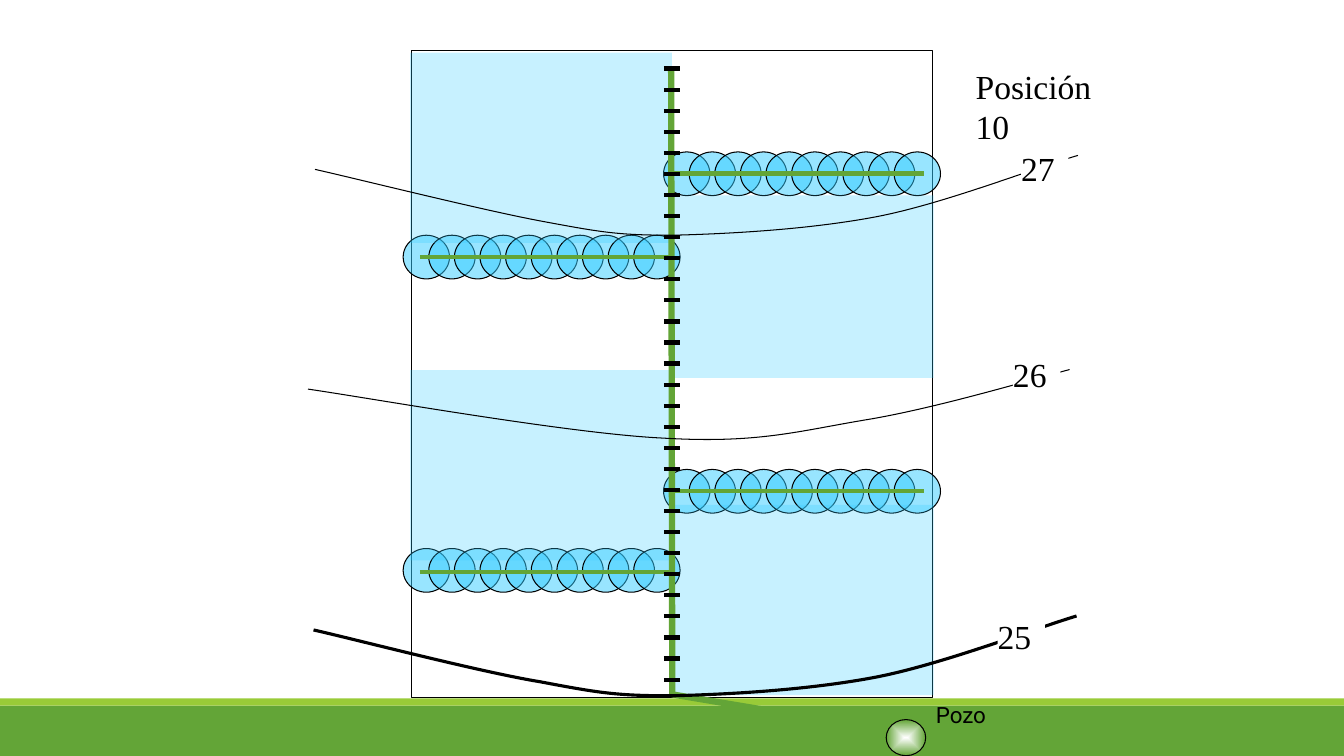
from lxml import etree
from pptx import Presentation
from pptx.dml.color import RGBColor
from pptx.enum.shapes import MSO_CONNECTOR, MSO_SHAPE
from pptx.enum.text import MSO_ANCHOR, PP_ALIGN
from pptx.oxml import parse_xml
from pptx.oxml.ns import nsdecls, qn
from pptx.util import Pt

RECT, OVAL = MSO_SHAPE.RECTANGLE, MSO_SHAPE.OVAL
STRAIGHT = MSO_CONNECTOR.STRAIGHT
TOP, LEFT = MSO_ANCHOR.TOP, PP_ALIGN.LEFT
GREEN, LIME, WATER = "63A537", "99CB38", "33CCFF"
BLACK, WHITE = "000000", "FFFFFF"

rgb = RGBColor.from_string
prs = Presentation()
prs.slide_width, prs.slide_height = Pt(960), Pt(540)
s = prs.slides.add_slide(prs.slide_layouts[6])


def add_shape(kind, x, y, w, h, fill=None, alpha=None, outlined=False):
    sp = s.shapes.add_shape(kind, Pt(x), Pt(y), Pt(w), Pt(h))
    sp.shadow.inherit = False
    if fill:
        sp.fill.solid()
        sp.fill.fore_color.rgb = rgb(fill)
    else:
        sp.fill.background()
    if alpha:
        clr = sp.element.spPr.find(".//" + qn("a:srgbClr"))
        etree.SubElement(clr, qn("a:alpha")).set("val", str(alpha * 1000))
    if outlined:
        sp.line.color.rgb = rgb(BLACK)
        sp.line.width = Pt(0.75)
    else:
        sp.line.fill.background()
    return sp


def add_line(x1, y1, x2, y2, color, width):
    line = s.shapes.add_connector(STRAIGHT, Pt(x1), Pt(y1), Pt(x2), Pt(y2))
    line.line.color.rgb = rgb(color)
    line.line.width = Pt(width)
    etree.SubElement(line.element.spPr, qn("a:effectLst"))


add_shape(RECT, 0, 504, 960, 36, GREEN)
add_shape(RECT, 0, 498.8, 960, 5.2, LIME)
add_shape(RECT, 294, 36, 372, 462.4, outlined=True)

sprinkler_rows = [
    (474, 335.3, 480, 350.8),
    (288, 391.8, 300, 408.8),
    (474, 108.5, 480, 124),
    (288, 168, 300, 183.6),
]
for x, y, pipe_x, pipe_y in sprinkler_rows:
    for i in range(10):
        add_shape(OVAL, x + i * 18.3, y, 33.1, 31.2, WATER, 50, True)
    add_line(pipe_x, pipe_y, pipe_x + 180, pipe_y, GREEN, 3)

for x, y, h in [(293, 264.4, 136), (293, 37.6, 136), (480, 139.6, 130.4), (480, 360.6, 136)]:
    add_shape(RECT, x, y, 187, h, WATER, 27)

add_line(480.2, 497.6, 479.4, 48.8, GREEN, 4.5)
add_line(480, 496, 636, 522, GREEN, 4.5)
for i in range(30):
    y = 49 + i * 15.05
    add_line(474.2, y, 485.6, y, BLACK, 3)

well = add_shape(OVAL, 633, 514, 28.2, 25.8, outlined=True)
no_fill = well.element.spPr.find(qn("a:noFill"))
well.element.spPr.replace(no_fill, parse_xml(
    f'<a:gradFill {nsdecls("a")} rotWithShape="1"><a:gsLst>'
    f'<a:gs pos="0"><a:srgbClr val="{WHITE}"/></a:gs>'
    f'<a:gs pos="100000"><a:srgbClr val="{GREEN}"/></a:gs></a:gsLst>'
    '<a:path path="shape"><a:fillToRect l="50000" t="50000" r="50000" b="50000"/></a:path>'
    '</a:gradFill>'))

contours = [
    (2.25, [(224.2, 450), (251.3, 456.5), (343.4, 479.5), (385.9, 487),
            (428.4, 494.6), (440.6, 497.3), (480.2, 496.8),
            (519.8, 496.3), (576, 492.9), (624.2, 483.8),
            (672.5, 474.6), (738.7, 449), (769, 440)]),
    (0.75, [(220.2, 278.4), (262.1, 284.4), (408.2, 309.6), (474.5, 313.2),
            (540.7, 316.8), (570.2, 308.2), (618.5, 300.2),
            (666.7, 292.3), (733.7, 272.2), (763.9, 264.4)]),
    (0.75, [(225, 121), (252, 127.4), (344.2, 150.5), (387, 158.1),
            (429.5, 165.7), (441.4, 168.3), (481, 167.8),
            (520.6, 167.3), (576.7, 163.9), (625, 154.8),
            (673.2, 145.7), (739.4, 120.2), (769.7, 111.3)]),
]
for width, points in contours:
    builder = s.shapes.build_freeform(*points[0], scale=Pt(1))
    builder.add_line_segments(points[1:], close=False)
    sp = builder.convert_to_shape()
    sp.shadow.inherit = False
    sp.fill.background()
    sp.line.color.rgb = rgb(BLACK)
    sp.line.width = Pt(width)
    outline = sp.element.spPr.find(".//" + qn("a:path"))
    segments = outline.findall(qn("a:lnTo"))
    for i in range(0, len(segments), 3):
        curve = etree.SubElement(outline, qn("a:cubicBezTo"))
        for segment in segments[i:i + 3]:
            curve.append(segment[0])
            outline.remove(segment)

labels = [
    ("Posición 10", 689.8, 43.2, 124.6, 65.5, 24, "Times New Roman", False),
    ("Pozo", 661.4, 497, 79.2, 26.6, 16, "Roboto", False),
    ("25", 712.6, 440, 33.8, 29, 24, "Times New Roman", True),
    ("26", 723.6, 252.9, 33.8, 29, 24, "Times New Roman", True),
    ("27", 729.4, 105.9, 33.8, 29, 24, "Times New Roman", True),
]
for text, x, y, w, h, size, font, on_contour in labels:
    sp = s.shapes.add_textbox(Pt(x), Pt(y), Pt(w), Pt(h))
    tf = sp.text_frame
    tf.word_wrap = True
    tf.vertical_anchor = TOP
    if on_contour:
        sp.fill.solid()
        sp.fill.fore_color.rgb = rgb(WHITE)
        tf.margin_left = tf.margin_right = tf.margin_top = tf.margin_bottom = Pt(0)
    p = tf.paragraphs[0]
    p.text = text
    p.alignment = LEFT
    p.font.size = Pt(size)
    p.font.name = font
    p.font.color.rgb = rgb(BLACK)

prs.save("out.pptx")
